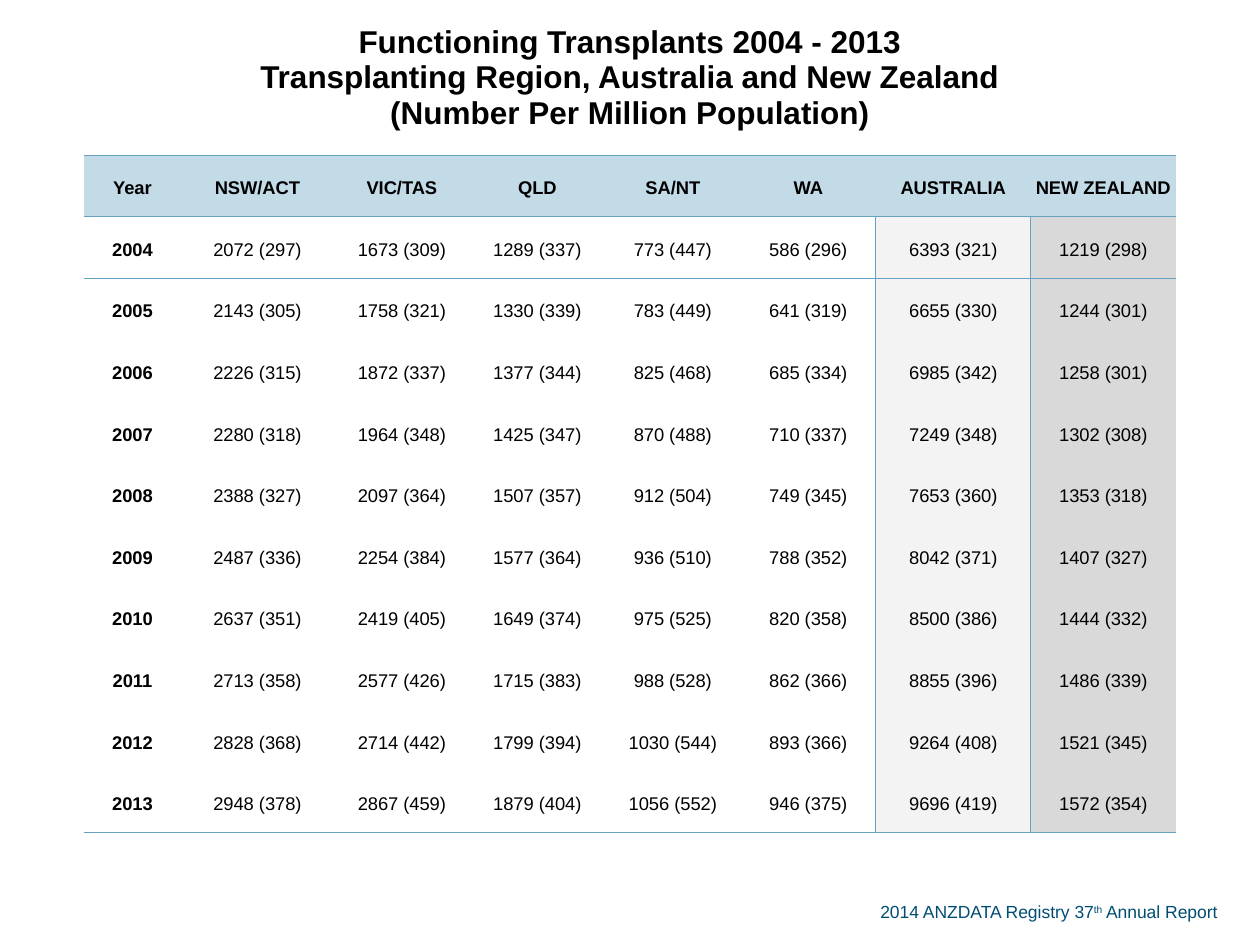
import pptx
import pptx.dml.color
import pptx.enum.text
import pptx.oxml.ns
import pptx.util
from lxml import etree

RGB = pptx.dml.color.RGBColor
BLACK = RGB(0x00, 0x00, 0x00)
FOOTER_BLUE = RGB(0x00, 0x4D, 0x73)
RULE_BLUE = RGB(0x66, 0xA3, 0xC2)
HEADER_BLUE = RGB(0xC2, 0xDB, 0xE7)
LIGHT_GREY = RGB(0xF3, 0xF3, 0xF3)
MID_GREY = RGB(0xD9, 0xD9, 0xD9)

EMU_PER_PX = 914400 // 126
FONT = "Arial"
NO_STYLE = "{2D5ABB26-0587-4C30-8999-92F81FD0307C}"
TITLE = [
    "Functioning Transplants 2004 - 2013",
    "Transplanting Region, Australia and New Zealand",
    "(Number Per Million Population)",
]
COLUMN_WIDTHS = [97, 153, 136, 135, 136, 135, 155, 145]
TITLE_HEIGHT = 155
GRID_HEIGHT = 678
COLUMN_FILLS = {6: LIGHT_GREY, 7: MID_GREY}
ROWS = [
    ["Year", "NSW/ACT", "VIC/TAS", "QLD", "SA/NT", "WA", "AUSTRALIA", "NEW ZEALAND"],
    ["2004", "2072 (297)", "1673 (309)", "1289 (337)", "773 (447)", "586 (296)", "6393 (321)", "1219 (298)"],
    ["2005", "2143 (305)", "1758 (321)", "1330 (339)", "783 (449)", "641 (319)", "6655 (330)", "1244 (301)"],
    ["2006", "2226 (315)", "1872 (337)", "1377 (344)", "825 (468)", "685 (334)", "6985 (342)", "1258 (301)"],
    ["2007", "2280 (318)", "1964 (348)", "1425 (347)", "870 (488)", "710 (337)", "7249 (348)", "1302 (308)"],
    ["2008", "2388 (327)", "2097 (364)", "1507 (357)", "912 (504)", "749 (345)", "7653 (360)", "1353 (318)"],
    ["2009", "2487 (336)", "2254 (384)", "1577 (364)", "936 (510)", "788 (352)", "8042 (371)", "1407 (327)"],
    ["2010", "2637 (351)", "2419 (405)", "1649 (374)", "975 (525)", "820 (358)", "8500 (386)", "1444 (332)"],
    ["2011", "2713 (358)", "2577 (426)", "1715 (383)", "988 (528)", "862 (366)", "8855 (396)", "1486 (339)"],
    ["2012", "2828 (368)", "2714 (442)", "1799 (394)", "1030 (544)", "893 (366)", "9264 (408)", "1521 (345)"],
    ["2013", "2948 (378)", "2867 (459)", "1879 (404)", "1056 (552)", "946 (375)", "9696 (419)", "1572 (354)"],
]


def px(n):
    """Turn pixels into EMU."""
    return pptx.util.Emu(n * EMU_PER_PX)


def set_font(font, size, color, bold=False):
    """Apply the slide's typeface with a size, colour and weight."""
    font.name = FONT
    font.size = pptx.util.Pt(size)
    font.bold = bold
    font.color.rgb = color


def add_borders(cell, sides):
    """Draw thin blue rules on the given sides, in L, R, T, B order."""
    tc_pr = cell._tc.get_or_add_tcPr()
    qn = pptx.oxml.ns.qn
    for side in sides:
        ln = etree.SubElement(tc_pr, qn(f"a:ln{side}"), w=str(pptx.util.Pt(0.5)))
        fill = etree.SubElement(ln, qn("a:solidFill"))
        etree.SubElement(fill, qn("a:srgbClr"), val=str(RULE_BLUE))


def format_cell(cell, lines, size, bold, sides, fill=None):
    """Write centred lines into a cell and set its rules and fill."""
    cell.margin_left = cell.margin_right = cell.margin_top = px(1)
    cell.margin_bottom = 0
    cell.vertical_anchor = pptx.enum.text.MSO_ANCHOR.MIDDLE
    add_borders(cell, sides)
    if fill is None:
        cell.fill.background()
    else:
        cell.fill.solid()
        cell.fill.fore_color.rgb = fill
    tf = cell.text_frame
    tf.text = "\n".join(lines)
    for p in tf.paragraphs:
        p.alignment = pptx.enum.text.PP_ALIGN.CENTER
        set_font(p.font, size, BLACK, bold)


def body_sides(row, col):
    """Tell which sides of a body cell carry a rule."""
    rules = {
        "L": col in COLUMN_FILLS,
        "R": col + 1 in COLUMN_FILLS,
        "T": row == 1,
        "B": row == len(ROWS) - 1,
    }
    return [side for side, present in rules.items() if present]


def add_transplant_table(slide):
    """Add the table with its title row, header and yearly figures."""
    frame = slide.shapes.add_table(
        len(ROWS) + 1, len(COLUMN_WIDTHS), px(84), px(0),
        px(sum(COLUMN_WIDTHS)), px(TITLE_HEIGHT + GRID_HEIGHT))
    table = frame.table
    table.first_row = table.horz_banding = False
    table._tbl.tblPr.find(pptx.oxml.ns.qn("a:tableStyleId")).text = NO_STYLE
    for column, width in zip(table.columns, COLUMN_WIDTHS):
        column.width = px(width)
    for row in table.rows:
        row.height = px(GRID_HEIGHT) // len(ROWS)
    table.rows[0].height = px(TITLE_HEIGHT)

    for col in range(len(COLUMN_WIDTHS)):
        add_borders(table.cell(0, col), "B" if col else "")
    table.cell(0, 0).merge(table.cell(0, len(COLUMN_WIDTHS) - 1))
    format_cell(table.cell(0, 0), TITLE, 18, True, "B")

    for i, values in enumerate(ROWS):
        for j, value in enumerate(values):
            cell = table.cell(i + 1, j)
            header = i == 0
            sides = "TB" if header else body_sides(i, j)
            fill = HEADER_BLUE if header else COLUMN_FILLS.get(j)
            format_cell(cell, [value], 10.5, header or j == 0, sides, fill)
            p = cell.text_frame.paragraphs[0]
            p.line_spacing = 1.19
            p.space_after = pptx.util.Pt(14)


def add_footer(slide):
    """Add the report name with its raised ordinal."""
    sp = slide.shapes.add_textbox(px(868), px(895), px(377), px(34))
    tf = sp.text_frame
    tf.word_wrap = False
    p = tf.paragraphs[0]
    for text in ("2014 ANZDATA Registry 37", "th", " Annual Report"):
        r = p.add_run()
        r.text = text
        if text == "th":
            r._r.get_or_add_rPr().set("baseline", "30000")
    set_font(p.font, 10, FOOTER_BLUE)


def main():
    """Build and save the slide."""
    prs = pptx.Presentation()
    prs.slide_width = pptx.util.Inches(10)
    prs.slide_height = pptx.util.Inches(7.5)
    slide = prs.slides.add_slide(prs.slide_layouts[6])
    add_footer(slide)
    add_transplant_table(slide)
    prs.save("out.pptx")


if __name__ == "__main__":
    main()
